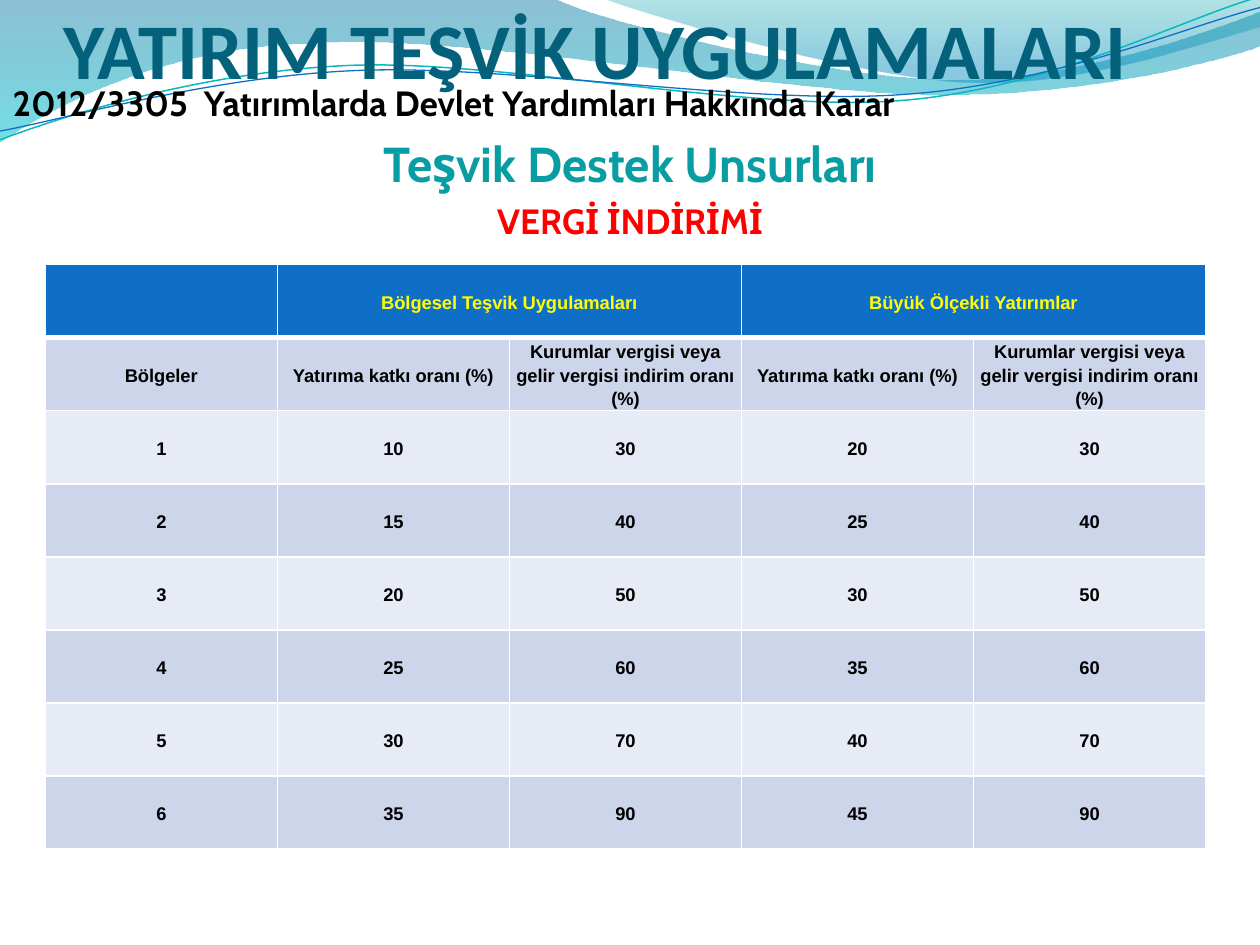
from lxml import etree
from pptx import Presentation
from pptx.dml.color import RGBColor
from pptx.enum.text import MSO_ANCHOR, MSO_AUTO_SIZE, PP_ALIGN
from pptx.oxml.ns import qn
from pptx.util import Inches, Pt

LEFT, CENTER = PP_ALIGN.LEFT, PP_ALIGN.CENTER
MIDDLE, BOTTOM, TOP = MSO_ANCHOR.MIDDLE, MSO_ANCHOR.BOTTOM, MSO_ANCHOR.TOP

BLACK = RGBColor(0x00, 0x00, 0x00)
WHITE = RGBColor(0xFF, 0xFF, 0xFF)
RED = RGBColor(0xFF, 0x00, 0x00)
YELLOW = RGBColor(0xFF, 0xFF, 0x00)
NAVY = RGBColor(0x04, 0x61, 0x7B)
TEAL = RGBColor(0x08, 0x9C, 0xA3)
BLUE = RGBColor(0x0F, 0x6F, 0xC6)
CYAN = RGBColor(0x0A, 0xB8, 0xBF)
BAND_DARK = RGBColor(0xCC, 0xD5, 0xEA)
BAND_LIGHT = RGBColor(0xE7, 0xEB, 0xF5)

TITLE = "YATIRIM TEŞVİK UYGULAMALARI"
HEADINGS = [  # text, size, colour, alignment
    ("2012/3305  Yatırımlarda Devlet Yardımları Hakkında Karar", 20, BLACK, LEFT),
    ("Teşvik Destek Unsurları", 28, TEAL, CENTER),
    ("VERGİ İNDİRİMİ", 20, RED, CENTER),
]
RATES = ["Yatırıma katkı oranı (%)",
         "Kurumlar vergisi veya gelir vergisi indirim oranı (%)"]
ROWS = [
    ["", "Bölgesel Teşvik Uygulamaları", "", "Büyük Ölçekli Yatırımlar", ""],
    ["Bölgeler"] + RATES * 2,
    [1, 10, 30, 20, 30],
    [2, 15, 40, 25, 40],
    [3, 20, 50, 30, 50],
    [4, 25, 60, 35, 60],
    [5, 30, 70, 40, 70],
    [6, 35, 90, 45, 90],
]

# An outline is a list of pieces: one point is a straight line to it,
# three points are a Bezier curve. The first piece is the start.
BANDS = [  # outline, gradient stops (position, colour, opacity in %)
    ([[(0, 0)], [(4.4, -0.01)],
      [(4.76, 0.17), (6.64, 0.63), (7.58, 0.63)],
      [(8.53, 0.63), (9.58, 0.26), (10, 0.09)], [(10.01, 0.36)],
      [(9.83, 0.44), (8.7, 0.76), (7.46, 0.75)],
      [(6.22, 0.75), (3.82, 0.28), (2.57, 0.34)],
      [(1.29, 0.36), (0.46, 0.83), (-0.01, 1.13)]],
     [(0, RGBColor(0x00, 0x74, 0xA1), 45), (1, RGBColor(0x00, 0xC6, 0xCF), 55)]),
    ([[(4.79, -0.01)],
      [(5.09, 0.11), (6.82, 0.62), (7.69, 0.65)],
      [(8.56, 0.69), (9.61, 0.32), (10, 0.21)], [(10, 0)]],
     [(0, RGBColor(0x00, 0xA1, 0xA9), 30), (0.8, RGBColor(0x00, 0x8B, 0xBF), 45)]),
]
WAVES = [  # outline, colour, width
    ([[(0, 1.11)],
      [(0.48, 0.93), (1.58, 0.57), (2.77, 0.52)],
      [(3.95, 0.47), (5.93, 0.89), (7.13, 0.8)],
      [(8.33, 0.71), (9.38, 0.15), (9.98, -0.02)]], CYAN, 0.85),
    ([[(0, 1.04)],
      [(0.47, 0.96), (1.64, 0.61), (2.83, 0.56)],
      [(4.03, 0.51), (5.97, 0.84), (7.17, 0.75)],
      [(8.36, 0.67), (9.41, 0.21), (10, 0.06)]], BLUE, 0.75),
]
UNITS = 1000  # freeform units per inch


def add_outline(s, outline, close):
    """Build a freeform through the piece ends, then bend its curved pieces."""
    pieces = [[(round(x * UNITS), round(y * UNITS)) for x, y in piece]
              for piece in outline]
    ends = [piece[-1] for piece in pieces]
    builder = s.shapes.build_freeform(*ends[0], scale=Inches(1) / UNITS)
    builder.add_line_segments(ends[1:], close=close)
    sp = builder.convert_to_shape()
    sp.shadow.inherit = False
    left, top = (min(values) for values in zip(*ends))
    segments = list(sp._element.iter(qn("a:lnTo")))
    for segment, piece in zip(segments, pieces[1:]):
        if len(piece) == 3:
            curve = etree.Element(qn("a:cubicBezTo"))
            for x, y in piece:
                etree.SubElement(curve, qn("a:pt"), x=str(x - left), y=str(y - top))
            segment.getparent().replace(segment, curve)
    return sp


def add_band(s, outline, stops):
    sp = add_outline(s, outline, True)
    sp.line.fill.background()
    sp.fill.gradient()
    sp.fill.gradient_angle = 270
    for stop, (position, colour, _) in zip(sp.fill.gradient_stops, stops):
        stop.position = position
        stop.color.rgb = colour
    colours = list(sp._element.spPr.iter(qn("a:srgbClr")))
    for node, (_, _, opacity) in zip(colours, stops):
        etree.SubElement(node, qn("a:alpha"), val=str(opacity * 1000))


def add_wave(s, outline, colour, width):
    sp = add_outline(s, outline, False)
    sp.fill.background()
    sp.line.color.rgb = colour
    sp.line.width = Pt(width)


def place(sp, left, top, width, height):
    sp.left, sp.top, sp.width, sp.height = map(Inches, (left, top, width, height))


def add_run(p, text, font, size, colour):
    r = p.add_run()
    r.text = text
    r.font.name = font
    r.font.size = Pt(size)
    r.font.bold = True
    r.font.color.rgb = colour


def fill_title(sp):
    place(sp, 0.5, 0, 9, 0.76)
    tf = sp.text_frame
    tf.auto_size = MSO_AUTO_SIZE.NONE
    tf.vertical_anchor = BOTTOM
    tf.margin_left = tf.margin_right = tf.margin_bottom = 0
    tf.margin_top = Inches(0.05)
    tf.paragraphs[0].alignment = LEFT
    add_run(tf.paragraphs[0], TITLE, "Calibri", 45, NAVY)


def fill_headings(sp):
    place(sp, 0, 0.6, 10, 6.9)
    tf = sp.text_frame
    tf.auto_size = MSO_AUTO_SIZE.NONE
    tf.vertical_anchor = TOP
    for i, (text, size, colour, alignment) in enumerate(HEADINGS):
        p = tf.add_paragraph() if i else tf.paragraphs[0]
        p.alignment = alignment
        pPr = p._p.get_or_add_pPr()
        pPr.set("marL", str(Inches(0.3)))
        pPr.set("indent", str(-Inches(0.3)))
        etree.SubElement(pPr, qn("a:buNone"))
        add_run(p, text, "Cabin", size, colour)


def set_borders(cell, **widths):
    tcPr = cell._tc.get_or_add_tcPr()
    for side in "LRTB":
        ln = etree.SubElement(tcPr, qn("a:ln" + side), w=str(Pt(widths.get(side, 1))))
        fill = etree.SubElement(ln, qn("a:solidFill"))
        etree.SubElement(fill, qn("a:srgbClr"), val=str(WHITE))


def add_rate_table(s):
    frame = s.shapes.add_table(len(ROWS), len(ROWS[0]), Inches(0.36), Inches(2.1),
                               Inches(9.21), Inches(4.65))
    table = frame.table
    for col in (1, 3):
        table.cell(0, col).merge(table.cell(0, col + 1))
    for i, row in enumerate(ROWS):
        table.rows[i].height = Inches(0.58)
        for j, value in enumerate(row):
            cell = table.cell(i, j)
            set_borders(cell, T=3 if i == 1 else 1, B=3 if i == 0 else 1)
            cell.fill.solid()
            cell.fill.fore_color.rgb = BLUE if i == 0 else (BAND_LIGHT, BAND_DARK)[i % 2]
            cell.vertical_anchor = MIDDLE
            cell.margin_left = cell.margin_right = Inches(0.01)
            cell.margin_top = cell.margin_bottom = Inches(0.01)
            if value != "":
                p = cell.text_frame.paragraphs[0]
                p.alignment = CENTER
                p.line_spacing = 1.15
                add_run(p, str(value), "Arial", 10.5, BLACK if i else YELLOW)


def main():
    prs = Presentation()
    prs.slide_width, prs.slide_height = Inches(10), Inches(7.5)
    s = prs.slides.add_slide(prs.slide_layouts[1])
    title, body = s.placeholders
    for band in BANDS:
        add_band(s, *band)
    for wave in WAVES:
        add_wave(s, *wave)
    for sp in (title, body):  # bring the text in front of the waves
        s.shapes._spTree.append(sp._element)
    fill_title(title)
    fill_headings(body)
    add_rate_table(s)
    prs.save("out.pptx")


if __name__ == "__main__":
    main()
